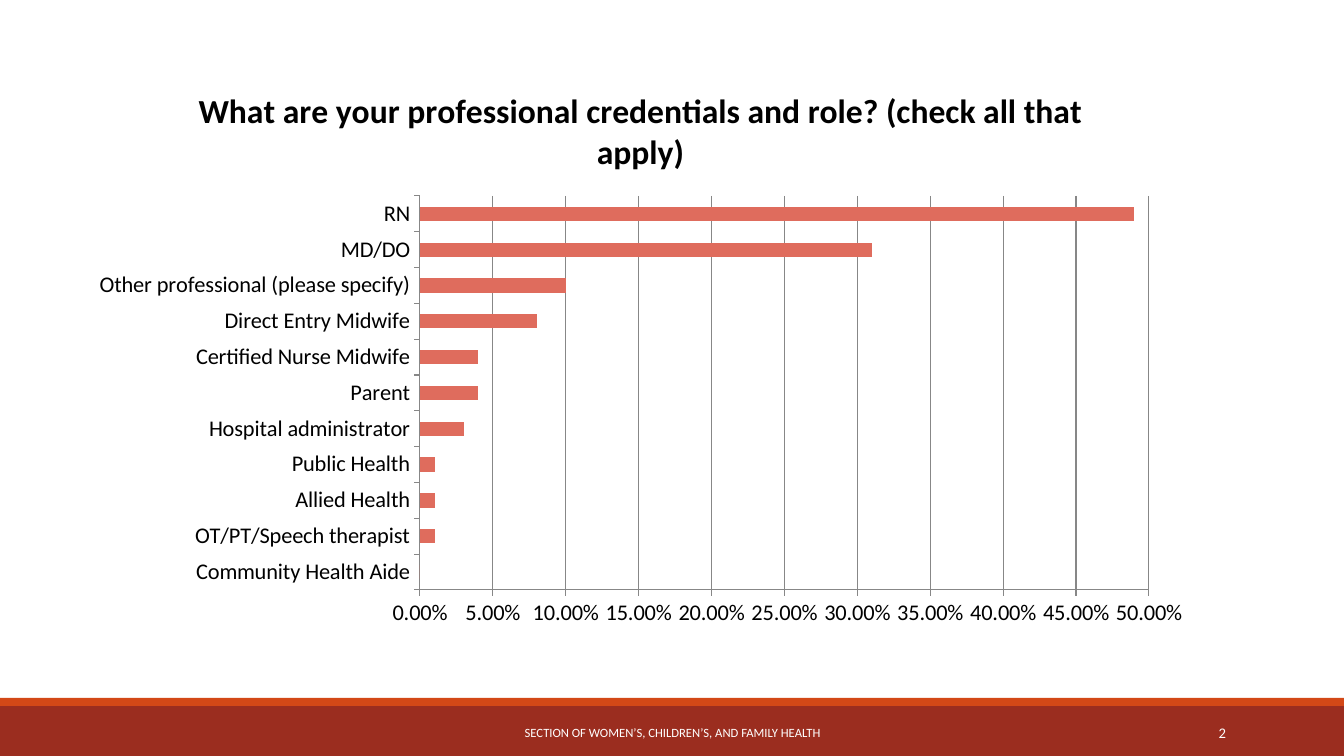
from lxml.etree import SubElement
from pptx import Presentation
from pptx.chart.data import CategoryChartData
from pptx.dml.color import RGBColor
from pptx.enum.chart import XL_CHART_TYPE, XL_TICK_MARK
from pptx.enum.shapes import MSO_SHAPE
from pptx.enum.text import MSO_ANCHOR, PP_ALIGN
from pptx.oxml.ns import qn
from pptx.util import Emu, Pt

FONT = "Calibri"
SLIDE_SIZE = (1344, 756)
BANDS = [((0, 706, 1344, 50), "9B2D1F"), ((0, 698, 1344, 8), "D34817")]
FOOTERS = [
    ("SECTION OF WOMEN’S, CHILDREN’S, AND FAMILY HEALTH", (407, 713, 531, 40), 9, PP_ALIGN.CENTER),
    ("2", (1092, 713, 144, 40), 10.5, PP_ALIGN.RIGHT),
]
TITLE = "What are your professional credentials and role? (check all that apply)"
CHART_BOX = (77, 65, 1127, 574)
PLOT_BOX = (420, 196, 729, 394)
CREDENTIALS = {
    "Community Health Aide": 0,
    "OT/PT/Speech therapist": 0.01,
    "Allied Health": 0.01,
    "Public Health": 0.01,
    "Hospital administrator": 0.03,
    "Parent": 0.04,
    "Certified Nurse Midwife": 0.04,
    "Direct Entry Midwife": 0.08,
    "Other professional (please specify)": 0.1,
    "MD/DO": 0.31,
    "RN": 0.49,
}


def px(length):
    """Convert pixels to EMU."""
    return Emu(round(length * 914400 / 100.8))


def box(lengths):
    """Convert a pixel box to EMU."""
    return [px(length) for length in lengths]


def color(value):
    """Turn a hex string into a colour."""
    return RGBColor.from_string(value)


def style_font(font, size, value, bold=False):
    """Set the face, size, colour and weight of a font."""
    font.name = FONT
    font.size = Pt(size)
    font.bold = bold
    font.color.rgb = color(value)


def add_band(slide, bounds, fill):
    """Add a plain coloured band."""
    shape = slide.shapes.add_shape(MSO_SHAPE.RECTANGLE, *box(bounds))
    shape.shadow.inherit = False
    shape.fill.solid()
    shape.fill.fore_color.rgb = color(fill)
    shape.line.fill.background()


def add_footer(slide, text, bounds, size, alignment):
    """Add one line of footer text."""
    text_frame = slide.shapes.add_textbox(*box(bounds)).text_frame
    text_frame.word_wrap = True
    text_frame.vertical_anchor = MSO_ANCHOR.MIDDLE
    text_frame.text = text
    paragraph = text_frame.paragraphs[0]
    paragraph.alignment = alignment
    style_font(paragraph.runs[0].font, size, "FFFFFF")


def place_plot(chart):
    """Fix the inner plot area inside the chart."""
    plot_area = chart.plots[0]._element.getparent()
    for layout in plot_area.findall(qn("c:layout")):
        plot_area.remove(layout)
    layout = SubElement(plot_area, qn("c:layout"))
    plot_area.insert(0, layout)
    manual = SubElement(layout, qn("c:manualLayout"))
    left, top, width, height = CHART_BOX
    plot_left, plot_top, plot_width, plot_height = PLOT_BOX
    settings = {
        "layoutTarget": "inner",
        "xMode": "edge",
        "yMode": "edge",
        "x": (plot_left - left) / width,
        "y": (plot_top - top) / height,
        "w": plot_width / width,
        "h": plot_height / height,
    }
    for name, value in settings.items():
        SubElement(manual, qn(f"c:{name}")).set("val", str(value))


def add_credentials_chart(slide):
    """Add the bar chart of credentials."""
    data = CategoryChartData(number_format="0.00%")
    data.categories = list(CREDENTIALS)
    data.add_series("Series 1", list(CREDENTIALS.values()))
    chart = slide.shapes.add_chart(XL_CHART_TYPE.BAR_CLUSTERED, *box(CHART_BOX), data).chart
    style_font(chart.font, 10, "000000")
    chart.has_legend = False
    chart.has_title = True
    chart.chart_title.include_in_layout = False
    title_frame = chart.chart_title.text_frame
    title_frame.text = TITLE
    style_font(title_frame.paragraphs[0].runs[0].font, 24, "000000", True)

    plot = chart.plots[0]
    plot.gap_width = 150
    plot.vary_by_categories = False
    bars = plot.series[0].format.fill
    bars.solid()
    bars.fore_color.rgb = color("DF6C5D")

    value_axis = chart.value_axis
    value_axis.minimum_scale = 0
    value_axis.maximum_scale = 0.5
    value_axis.major_unit = 0.05
    value_axis.has_major_gridlines = True
    value_axis.tick_labels.number_format = "0.00%"
    value_axis.tick_labels.number_format_is_linked = False
    for axis in (chart.category_axis, value_axis):
        axis.major_tick_mark = XL_TICK_MARK.OUTSIDE
        style_font(axis.tick_labels.font, 16, "000000")
    for line in (chart.category_axis.format.line, value_axis.format.line,
                 value_axis.major_gridlines.format.line):
        line.color.rgb = color("878787")
        line.width = Pt(0.75)
    place_plot(chart)


def main():
    """Build and save the slide."""
    presentation = Presentation()
    presentation.slide_width, presentation.slide_height = box(SLIDE_SIZE)
    slide = presentation.slides.add_slide(presentation.slide_layouts[6])
    for bounds, fill in BANDS:
        add_band(slide, bounds, fill)
    for footer in FOOTERS:
        add_footer(slide, *footer)
    add_credentials_chart(slide)
    presentation.save("out.pptx")


if __name__ == "__main__":
    main()
